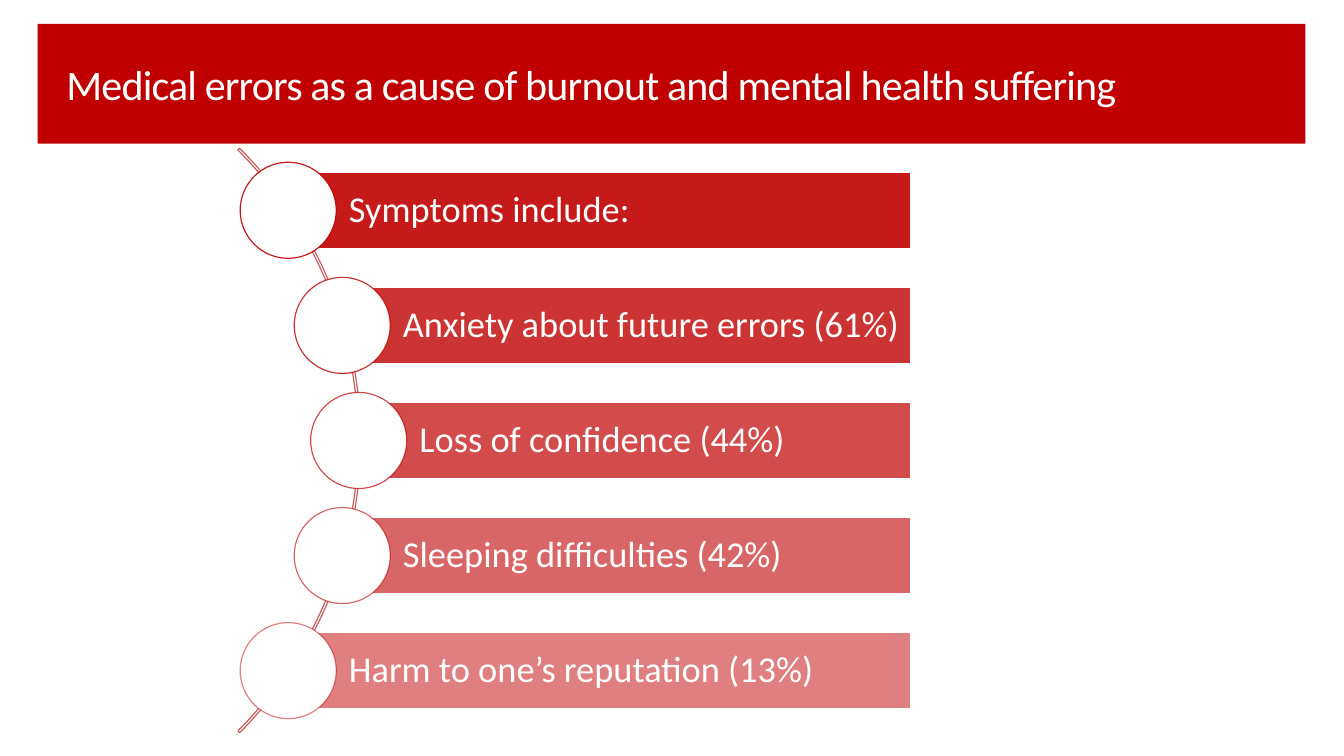
"""Build the slide on burnout symptoms that follow medical errors."""
import math

import pptx
import pptx.dml.color
import pptx.enum.shapes
import pptx.enum.text
import pptx.oxml.ns
import pptx.util
from lxml import etree

Cm = pptx.util.Cm
Pt = pptx.util.Pt
RGBColor = pptx.dml.color.RGBColor
MSO_SHAPE = pptx.enum.shapes.MSO_SHAPE
MSO_ANCHOR = pptx.enum.text.MSO_ANCHOR
PP_ALIGN = pptx.enum.text.PP_ALIGN
qn = pptx.oxml.ns.qn

RED = RGBColor(0xC0, 0x00, 0x00)
ROSE = RGBColor(0xC7, 0x5E, 0x5E)
WHITE = RGBColor(0xFF, 0xFF, 0xFF)

TITLE = "Medical errors as a cause of burnout and mental health suffering"
SYMPTOMS = [
    "Symptoms include:",
    "Anxiety about future errors (61%)",
    "Loss of confidence (44%)",
    "Sleeping difficulties (42%)",
    "Harm to one’s reputation (13%)",
]

ARC_X, ARC_Y, ARC_R = -1.32, 11.1, 10.41
CIRCLE_R = 10.36
STEP = 2.9
BAR_RIGHT, BAR_H = 22.96, 1.92
CIRCLE_D = 2.42


class SlideBuilder:
    def __init__(self, s):
        self.s = s
        self.line_width = Pt(0.85)
        self.font = {"name": "Calibri", "bold": False}
        self.frame = {
            "word_wrap": True,
            "auto_size": pptx.enum.text.MSO_AUTO_SIZE.NONE,
            "vertical_anchor": MSO_ANCHOR.MIDDLE,
        }
        self.paragraph = {"alignment": PP_ALIGN.LEFT, "line_spacing": 0.9}

    def apply(self, target, values):
        for name, value in values.items():
            setattr(target, name, value)

    def paint(self, fill, color, opacity=100):
        fill.solid()
        fill.fore_color.rgb = color
        if opacity < 100:
            clr = fill._xPr.find(".//" + qn("a:srgbClr"))
            etree.SubElement(clr, qn("a:alpha"), val=str(opacity * 1000))

    def text(self, sp, text, size, **frame):
        tf = sp.text_frame
        self.apply(tf, {**self.frame, **frame})
        p = tf.paragraphs[0]
        self.apply(p, self.paragraph)
        r = p.add_run()
        r.text = text
        self.apply(r.font, {**self.font, "size": Pt(size)})
        r.font.color.rgb = WHITE
        return r

    def shape(self, kind, left, top, width, height, fill=None, line=None,
              fill_opacity=100, line_opacity=100):
        sp = self.s.shapes.add_shape(
            kind, Cm(left), Cm(top), Cm(width), Cm(height))
        sp.shadow.inherit = False
        if fill is None:
            sp.fill.background()
        else:
            self.paint(sp.fill, fill, fill_opacity)
        if line is None:
            sp.line.fill.background()
        else:
            sp.line.width = self.line_width
            self.paint(sp.line.fill, line, line_opacity)
        return sp

    def title(self, text):
        sp = self.s.shapes.title
        banner = self.shape(MSO_SHAPE.RECTANGLE, 0.95, 0.6, 31.95, 3.02, RED)
        sp.element.addprevious(banner.element)
        self.apply(sp, {"left": Cm(1.42), "top": Cm(0.58),
                        "width": Cm(28.8), "height": Cm(3.2)})
        r = self.text(sp, text, 30)
        r.font._element.set("spc", "-60")

    def arc(self):
        sp = self.shape(MSO_SHAPE.BLOCK_ARC, ARC_X - ARC_R, ARC_Y - ARC_R,
                        2 * ARC_R, 2 * ARC_R, line=ROSE)
        for i, value in enumerate((189, 27, 0.003)):
            sp.adjustments[i] = value

    def symptom(self, text, x, y, opacity):
        bar = self.shape(MSO_SHAPE.RECTANGLE, x, y - BAR_H / 2, BAR_RIGHT - x,
                         BAR_H, RED, WHITE, fill_opacity=opacity)
        self.text(bar, text, 26, margin_left=Cm(1.53), margin_right=Cm(0.17),
                  margin_top=Cm(0.17), margin_bottom=Cm(0.17))
        self.shape(MSO_SHAPE.OVAL, x - CIRCLE_D / 2, y - CIRCLE_D / 2,
                   CIRCLE_D, CIRCLE_D, WHITE, RED, line_opacity=opacity)


def main():
    prs = pptx.Presentation()
    prs.slide_width, prs.slide_height = Cm(33.87), Cm(19.05)
    s = prs.slides.add_slide(prs.slide_layouts[5])
    builder = SlideBuilder(s)
    builder.title(TITLE)
    builder.arc()
    for i, text in enumerate(SYMPTOMS):
        dy = (i - 2) * STEP
        x = ARC_X + math.sqrt(CIRCLE_R ** 2 - dy ** 2)
        builder.symptom(text, x, ARC_Y + dy, 90 - 10 * i)
    prs.save("out.pptx")


if __name__ == "__main__":
    main()
